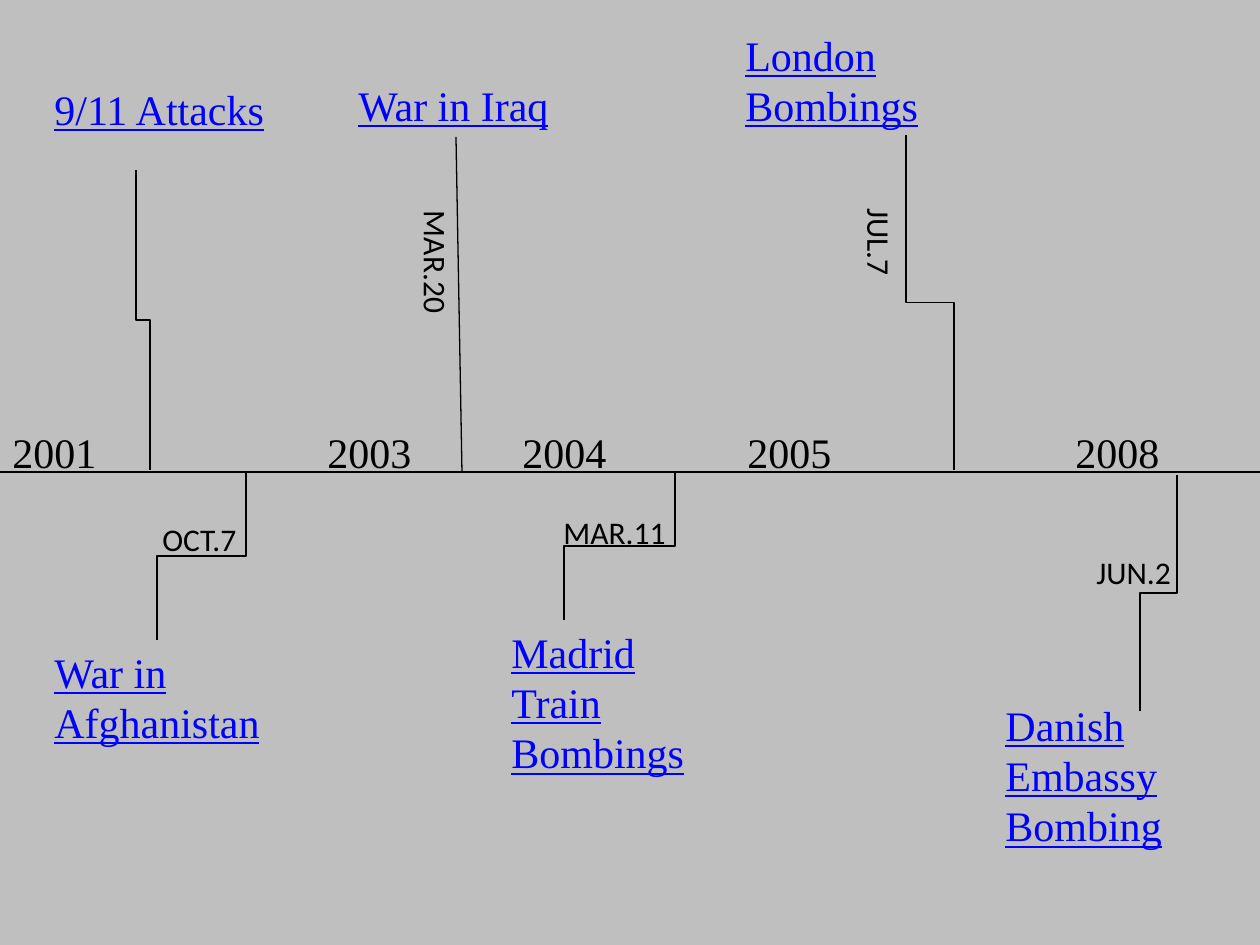
from lxml import etree
from pptx import Presentation, util as u
from pptx.dml.color import RGBColor
from pptx.enum import shapes, text
from pptx.oxml.ns import qn

PX = 914400 / 126
COLOR = {"back": "BFBFBF", "ink": "000000", "link": "0000FF"}
SERIF, SANS = "Times New Roman", "Calibri"

YEARS = [("2001", 0, 116), ("2003", 315, 126), ("2004", 510, 116),
         ("2005", 735, 116), ("2008", 1063, 126)]

EVENTS = [
    ("9/11 Attacks", (42, 77, 242, 63), (94, 93, 108, 393), None),
    ("War in Afghanistan", (42, 640, 241, 115), (204, -168, 115, 0),
     ("OCT.7", 108, -126, 112, 0)),
    ("War in Iraq", (346, 73, 220, 63), (110, 64, 116, 399),
     ("MAR.20", 22, 169, 137, 90)),
    ("Madrid Train Bombings", (499, 620, 209, 165), (176, -148, 65, 0),
     ("MAR.11", 52, -113, 134, 0)),
    ("London Bombings", (733, 23, 215, 115), (173, 112, 221, 447),
     ("JUL.7", 91, 204, 112, 90)),
    ("Danish Embassy Bombing", (993, 693, 273, 165), (184, -218, 147, 18),
     ("JUN.2", 91, -146, 112, 0)),
]


def px(n):
    """Turn pixels into EMU."""
    return u.Emu(round(n * PX))


def rgb(name):
    """Look up a colour by name."""
    return RGBColor.from_string(COLOR[name])


def write(slide, words, box, font=SERIF, size=24, color="ink", line=False, turn=0):
    """Place a wrapped text box with one formatted paragraph."""
    shape = slide.shapes.add_textbox(*map(px, box))
    shape.rotation = turn
    frame = shape.text_frame
    frame.word_wrap = True
    frame.auto_size = text.MSO_AUTO_SIZE.SHAPE_TO_FIT_TEXT
    run = frame.paragraphs[0].add_run()
    run.text = words
    run.font.name = font
    run.font.size = u.Pt(size)
    run.font.color.rgb = rgb(color)
    run.font.underline = line


def rule(slide, ends, kind=shapes.MSO_CONNECTOR.STRAIGHT):
    """Draw a thin connector without a shadow."""
    link = slide.shapes.add_connector(kind, *map(px, ends))
    link.line.color.rgb = rgb("ink")
    link.line.width = u.Pt(0.75)
    etree.SubElement(link.element.spPr, qn("a:effectLst"))
    return link


def elbow(slide, ends):
    """Draw a bent line that leaves and arrives vertically, top end first."""
    left, top, right, low = ends
    mid_x, mid_y = (left + right) / 2, (top + low) / 2
    run, rise = (low - top) / 2, (left - right) / 2
    link = rule(slide, (mid_x - run, mid_y - rise, mid_x + run, mid_y + rise),
                shapes.MSO_CONNECTOR.ELBOW)
    link.element.spPr.find(qn("a:xfrm")).set("rot", str(90 * 60000))


def axis(slide, box):
    """Draw the time axis with its years."""
    x, y, wide, high = box
    rule(slide, (x, y + 52, x + wide, y + 52))
    for year, left, span in YEARS:
        write(slide, year, (x + left, y, span, high))


def event(slide, box, name, stem, date):
    """Place one event with its stem and date, relative to its name box."""
    x, y = box[:2]
    write(slide, name, box, color="link", line=True)
    ends = (x + stem[0], y + stem[1], x + stem[2], y + stem[3])
    if abs(stem[0] - stem[2]) > 10:
        elbow(slide, ends)
    else:
        rule(slide, ends)
    if date:
        words, left, top, wide, turn = date
        write(slide, words, (x + left, y + top, wide, 50), font=SANS, size=18,
              turn=turn)


def main():
    """Build the timeline slide and save it."""
    deck = Presentation()
    deck.slide_width, deck.slide_height = px(1260), px(945)
    slide = deck.slides.add_slide(deck.slide_layouts[6])
    back = slide.background.fill
    back.solid()
    back.fore_color.rgb = rgb("back")
    axis(slide, (0, 420, 1260, 63))
    for name, box, stem, date in EVENTS:
        event(slide, box, name, stem, date)
    deck.save("out.pptx")


if __name__ == "__main__":
    main()
